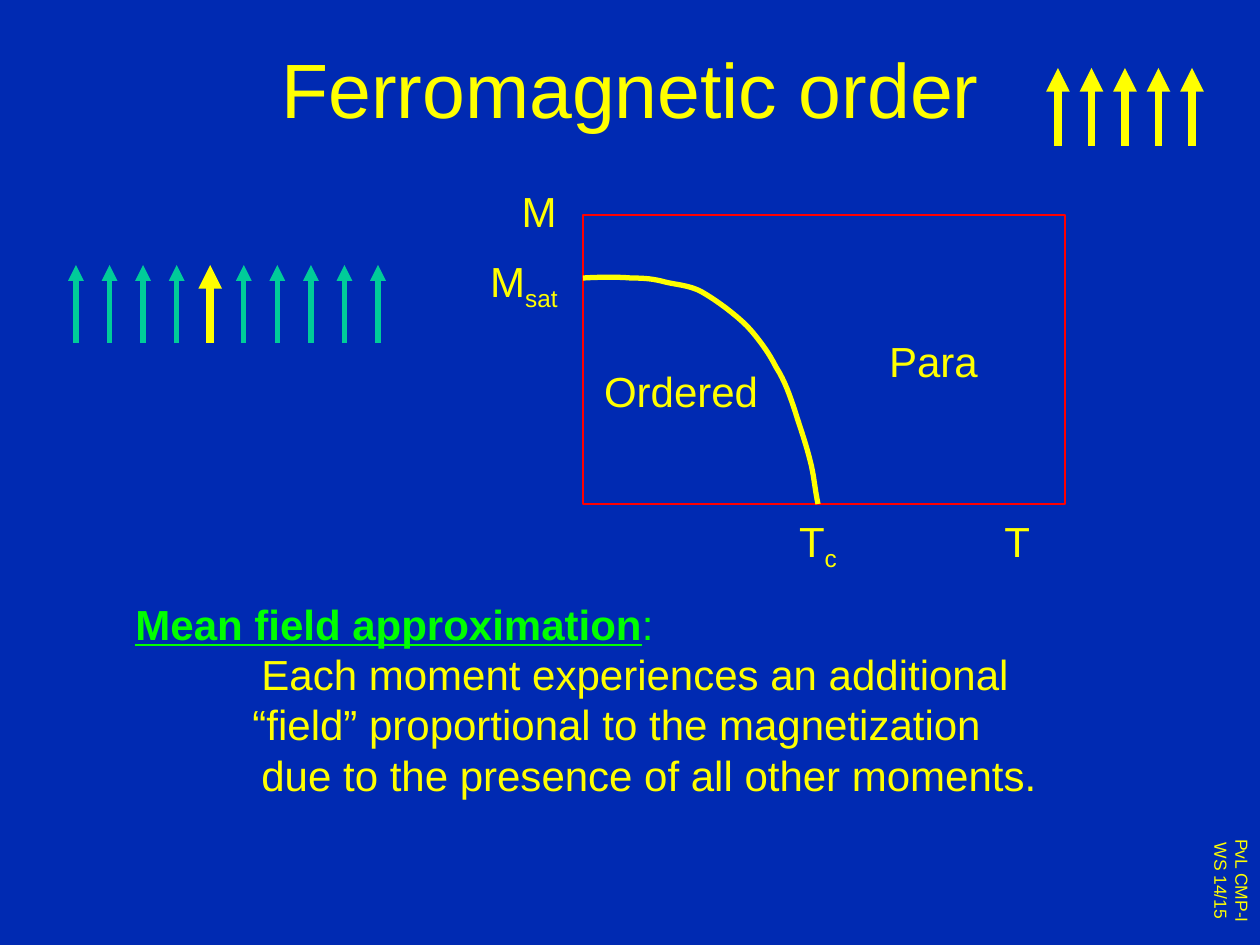
from dataclasses import dataclass, field
from typing import NamedTuple

from lxml import etree
from pptx import Presentation
from pptx import util as u
from pptx.dml.color import RGBColor
from pptx.enum import shapes, text
from pptx.oxml.ns import qn

PX = 914400 / 126  # EMU per px


@dataclass(frozen=True)
class Theme:
    font: str = "Arial"
    back: str = "002AB2"
    main: str = "FFFF00"
    heading: str = "00FF00"
    neighbour: str = "00CC99"
    frame: str = "FF0000"
    title_pt: int = 44
    body_pt: int = 24
    foot_pt: int = 10
    thick: float = 4.5
    medium: float = 3
    thin: float = 0.75


T = Theme()


class Run(NamedTuple):
    text: str
    color: str = T.main
    fmt: dict = {}
    baseline: int = 0


class Para(NamedTuple):
    runs: list
    indent: int = 0


@dataclass
class Label:
    box: tuple
    paras: list
    size: int = T.body_pt
    align: text.PP_ALIGN = text.PP_ALIGN.CENTER
    body: dict = field(default_factory=dict)
    vert: str = "horz"


class ArrowRow(NamedTuple):
    first: int
    last: int
    count: int
    tail: int
    tip: int
    color: str
    width: float
    highlight: int = -1


def emu(px: float) -> int:
    return round(px * PX)


def set_line(sp, color: str, width: float) -> None:
    sp.line.color.rgb = RGBColor.from_string(color)
    sp.line.width = u.Pt(width)


def add_label(s, label: Label) -> None:
    tf = s.shapes.add_textbox(*map(emu, label.box)).text_frame
    for name, value in ({"word_wrap": False} | label.body).items():
        setattr(tf, name, value)
    tf._txBody.bodyPr.set("vert", label.vert)
    for i, para in enumerate(label.paras):
        p = tf.add_paragraph() if i else tf.paragraphs[0]
        p.alignment = label.align
        if para.indent:
            p._p.get_or_add_pPr().set("marL", str(emu(para.indent)))
        for run in para.runs:
            r = p.add_run()
            r.text = run.text
            fmt = {"name": T.font, "size": u.Pt(label.size)} | run.fmt
            for name, value in fmt.items():
                setattr(r.font, name, value)
            r.font.color.rgb = RGBColor.from_string(run.color)
            if run.baseline:
                r._r.get_or_add_rPr().set("baseline", str(run.baseline))


def add_arrows(s, row: ArrowRow) -> None:
    group = s.shapes.add_group_shape()
    pitch = (row.last - row.first) / (row.count - 1)
    for i in range(row.count):
        x = emu(row.first + i * pitch)
        c = group.shapes.add_connector(
            shapes.MSO_CONNECTOR.STRAIGHT, x, emu(row.tail), x, emu(row.tip))
        if i == row.highlight:
            set_line(c, T.main, T.thick)
        else:
            set_line(c, row.color, row.width)
        etree.SubElement(c.line._get_or_add_ln(), qn("a:tailEnd"), type="triangle")
        etree.SubElement(c._element.spPr, qn("a:effectLst"))


def bezier(a: tuple, b: tuple, c: tuple, d: tuple, steps: int = 8) -> list:
    """Points along one cubic segment, without its start."""
    points = []
    for k in range(1, steps + 1):
        t = k / steps
        w = ((1 - t) ** 3, 3 * t * (1 - t) ** 2, 3 * t * t * (1 - t), t ** 3)
        points.append(tuple(emu(sum(wi * v for wi, v in zip(w, axis)))
                            for axis in zip(a, b, c, d)))
    return points


def add_curve(s, knots: list) -> None:
    fb = s.shapes.build_freeform(*map(emu, knots[0]))
    points = []
    for i in range(0, len(knots) - 1, 3):
        points += bezier(*knots[i:i + 4])
    fb.add_line_segments(points, close=False)
    sp = fb.convert_to_shape()
    sp.shadow.inherit = False
    sp.fill.background()
    set_line(sp, T.main, T.medium)


def plain(words: str, sub: str = "") -> list:
    runs = [Run(words)]
    if sub:
        runs.append(Run(sub, baseline=-25000))
    return [Para(runs)]


FOOTER = Label((1191, 832, 68, 98), plain("PvL CMP-I") + plain("WS 14/15"),
               T.foot_pt, vert="vert")
TITLE = Label((95, 9, 1071, 157), plain("Ferromagnetic order"), T.title_pt,
              body={"word_wrap": True, "vertical_anchor": text.MSO_ANCHOR.MIDDLE})
MEAN_FIELD = Label((123, 592, 926, 214), [
    Para([Run("Mean field approximation", T.heading, {"bold": True, "underline": True}),
          Run(":", T.heading)]),
    Para([Run("Each moment experiences an additional")], 126),
    Para([Run("“field” proportional to the magnetization")], 117),
    Para([Run("due to the presence of all other moments.")], 126),
], align=text.PP_ALIGN.LEFT)
PLOT_LABELS = [
    Label((509, 179, 60, 63), plain("M")),
    Label((992, 509, 50, 63), plain("T")),
    Label((785, 509, 66, 63), plain("T", "c")),
    Label((475, 249, 98, 63), plain("M", "sat")),
    Label((591, 359, 180, 63), plain("Ordered")),
    Label((876, 329, 115, 63), plain("Para")),
]
ARROW_ROWS = [
    ArrowRow(1058, 1192, 5, 146, 68, T.main, T.thick),
    ArrowRow(76, 378, 10, 343, 265, T.neighbour, T.medium, highlight=4),
]
PLOT_FRAME = (583, 215, 482, 289)
MAGNETIZATION = [
    (583, 278), (601, 277), (619, 277), (631, 278), (645, 278), (654, 279),
    (665, 282), (677, 285), (689, 285), (702, 292), (716, 300), (735, 314),
    (747, 326), (759, 339), (769, 353), (776, 367), (785, 381), (790, 396),
    (795, 411), (800, 427), (806, 444), (810, 460), (814, 475), (815, 490),
    (818, 504),
]


def main() -> None:
    prs = Presentation()
    prs.slide_width, prs.slide_height = emu(1260), emu(945)
    s = prs.slides.add_slide(prs.slide_layouts[6])
    s.background.fill.solid()
    s.background.fill.fore_color.rgb = RGBColor.from_string(T.back)

    # Footer, title and rows of moments
    add_label(s, FOOTER)
    add_label(s, TITLE)
    for row in ARROW_ROWS:
        add_arrows(s, row)
    add_label(s, MEAN_FIELD)

    # Phase diagram
    frame = s.shapes.add_shape(shapes.MSO_SHAPE.RECTANGLE, *map(emu, PLOT_FRAME))
    frame.shadow.inherit = False
    frame.fill.background()
    set_line(frame, T.frame, T.thin)
    add_curve(s, MAGNETIZATION)
    for label in PLOT_LABELS:
        add_label(s, label)

    prs.save("out.pptx")


if __name__ == "__main__":
    main()
